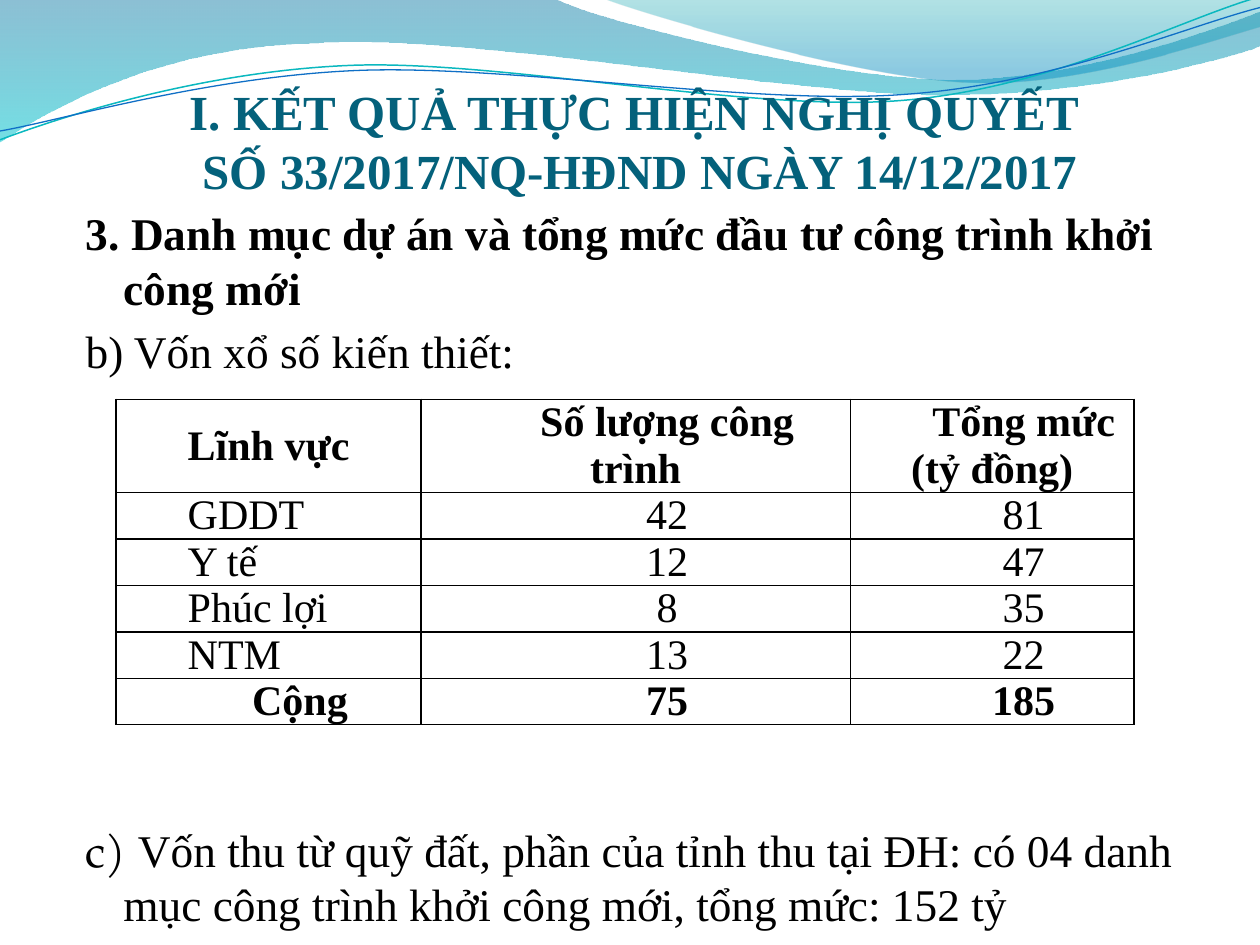
from dataclasses import dataclass

from lxml.etree import SubElement
from pptx import Presentation
from pptx.dml.color import RGBColor
from pptx.enum.text import MSO_ANCHOR, MSO_AUTO_SIZE, PP_ALIGN
from pptx.oxml.ns import qn
from pptx.util import Inches, Pt


@dataclass(frozen=True)
class Theme:
    """Colours, fonts and type sizes of the slide."""

    title_color: str = "04617B"
    ink: str = "000000"
    paper: str = "FFFFFF"
    cyan_line: str = "0AB8BF"
    blue_line: str = "0F6FC6"
    wide_wave: tuple = ((0, "0074A1", 45), (1, "00C6CF", 55))
    corner_wave: tuple = ((0, "00A1A9", 30), (0.8, "008BBF", 45))
    font: str = "Times New Roman"
    marker_font: str = "TeX Gyre Pagella"
    title_size: float = 28
    body_size: float = 25.9
    table_size: float = 24
    title_leading: float = 33.7
    body_leading: float = 31.1


THEME = Theme()

WIDE_WAVE = [
    [(0, 0)], [(4.4, -0.01)],
    [(4.76, 0.17), (6.64, 0.63), (7.58, 0.63)],
    [(8.53, 0.63), (9.58, 0.26), (10, 0.09)], [(10.01, 0.36)],
    [(9.83, 0.44), (8.7, 0.76), (7.46, 0.75)],
    [(6.22, 0.75), (3.82, 0.28), (2.57, 0.34)],
    [(1.29, 0.36), (0.46, 0.83), (-0.01, 1.13)], [(0, 0)],
]
CORNER_WAVE = [
    [(4.79, -0.01)],
    [(5.09, 0.11), (6.82, 0.62), (7.69, 0.65)],
    [(8.56, 0.69), (9.61, 0.32), (10, 0.21)], [(10, 0)], [(4.79, -0.01)],
]
CYAN_CURVE = [
    [(0, 1.11)],
    [(0.48, 0.93), (1.58, 0.57), (2.77, 0.52)],
    [(3.95, 0.47), (5.93, 0.89), (7.13, 0.8)],
    [(8.33, 0.71), (9.38, 0.15), (9.98, -0.02)],
]
BLUE_CURVE = [
    [(0, 1.04)],
    [(0.47, 0.96), (1.64, 0.61), (2.83, 0.56)],
    [(4.03, 0.51), (5.97, 0.84), (7.17, 0.75)],
    [(8.36, 0.67), (9.41, 0.21), (10, 0.06)],
]
ROWS = [
    ("Lĩnh vực", "Số lượng công trình", "Tổng mức (tỷ đồng)"),
    ("GDDT", "42", "81"),
    ("Y tế", "12", "47"),
    ("Phúc lợi", "8", "35"),
    ("NTM", "13", "22"),
    ("Cộng", "75", "185"),
]


def write(paragraph, text, size, color=THEME.ink, bold=False, font=THEME.font,
          align=PP_ALIGN.LEFT, left=0, indent=0, before=0, leading=None):
    """Add formatted text to a paragraph, with newlines as line breaks."""
    for number, line in enumerate(text.split("\n")):
        if number:
            paragraph.add_line_break()
        run = paragraph.add_run()
        run.text = line
        run.font.name, run.font.size, run.font.bold = font, Pt(size), bold
        run.font.color.rgb = RGBColor.from_string(color)
    paragraph.alignment = align
    paragraph.space_before = Pt(before)
    if leading:
        paragraph.line_spacing = Pt(leading)
    properties = paragraph._p.get_or_add_pPr()
    properties.set("marL", str(Inches(left)))
    properties.set("indent", str(Inches(indent)))
    if properties.find(qn("a:buNone")) is None:
        SubElement(properties, qn("a:buNone"))


def place(shape, box):
    """Move a shape to a box of left, top, width and height in inches."""
    shape.left, shape.top, shape.width, shape.height = map(Inches, box)


def add_outline(slide, segments, closed):
    """Draw straight and cubic segments as one freeform without shadow."""
    start, *points = [(Inches(x), Inches(y)) for segment in segments for x, y in segment]
    builder = slide.shapes.build_freeform(*start, scale=1.0)
    builder.add_line_segments(points, close=closed)
    shape = builder.convert_to_shape()
    shape.shadow.inherit = False
    outline = next(shape._element.iter(qn("a:path")))
    lines = iter(outline.findall(qn("a:lnTo")))
    for segment in segments[1:]:
        group = [next(lines) for _ in segment]
        if len(group) == 3:
            cubic = SubElement(outline, qn("a:cubicBezTo"))
            group[0].addprevious(cubic)
            for line in group:
                cubic.append(line[0])
                outline.remove(line)
    return shape


def add_wave(slide, segments, stops):
    """Draw a wave with a transparent gradient from top to bottom."""
    shape = add_outline(slide, segments, True)
    shape.line.fill.background()
    shape.fill.gradient()
    shape.fill.gradient_angle = 270
    for stop, (position, color, opacity) in zip(shape.fill.gradient_stops, stops):
        stop.position = position
        stop.color.rgb = RGBColor.from_string(color)
        color_element = stop._gs.find(qn("a:srgbClr"))
        SubElement(color_element, qn("a:alpha"), val=str(opacity * 1000))


def add_curve(slide, segments, color, width):
    """Draw an open curved line."""
    shape = add_outline(slide, segments, False)
    shape.fill.background()
    shape.line.color.rgb = RGBColor.from_string(color)
    shape.line.width = Pt(width)


def add_waves(slide):
    """Draw the decoration along the top edge."""
    add_wave(slide, WIDE_WAVE, THEME.wide_wave)
    add_wave(slide, CORNER_WAVE, THEME.corner_wave)
    add_curve(slide, CYAN_CURVE, THEME.cyan_line, 0.85)
    add_curve(slide, BLUE_CURVE, THEME.blue_line, 0.75)


def fill_title(slide, box):
    """Place and write the title."""
    title = slide.shapes.title
    place(title, box)
    frame = title.text_frame
    frame.auto_size, frame.vertical_anchor = MSO_AUTO_SIZE.NONE, MSO_ANCHOR.BOTTOM
    frame.margin_left = frame.margin_right = frame.margin_bottom = 0
    write(frame.paragraphs[0],
          "I. KẾT QUẢ THỰC HIỆN NGHỊ QUYẾT \nSỐ 33/2017/NQ-HĐND NGÀY 14/12/2017",
          THEME.title_size, color=THEME.title_color, bold=True,
          align=PP_ALIGN.CENTER, leading=THEME.title_leading)
    slide.shapes._spTree.append(title._element)


def fill_body(slide, box):
    """Place and write the list, leaving room for the table."""
    body = slide.placeholders[1]
    place(body, box)
    frame = body.text_frame
    frame.auto_size, frame.vertical_anchor = MSO_AUTO_SIZE.NONE, MSO_ANCHOR.TOP
    layout = {"left": 0.3, "indent": -0.3, "leading": THEME.body_leading}
    write(frame.paragraphs[0],
          "3. Danh mục dự án và tổng mức đầu tư công trình khởi công mới",
          THEME.body_size, bold=True, before=5, **layout)
    write(frame.add_paragraph(), "b) Vốn xổ số kiến thiết:",
          THEME.body_size, before=5, **layout)
    land = frame.add_paragraph()
    for text, font in (("c) ", THEME.marker_font),
                       ("Vốn thu từ quỹ đất, phần của tỉnh thu tại ĐH: có 04 danh mục "
                        "công trình khởi công mới, tổng mức: 152 tỷ", THEME.font)):
        write(land, text, THEME.body_size, font=font, before=254, **layout)
    slide.shapes._spTree.append(body._element)


def format_cell(cell):
    """Give a cell its borders, fill, margins and anchor."""
    properties = cell._tc.get_or_add_tcPr()
    for side in ("lnL", "lnR", "lnT", "lnB"):
        line = SubElement(properties, qn(f"a:{side}"), w=str(Pt(1)))
        SubElement(SubElement(line, qn("a:solidFill")), qn("a:srgbClr"), val=THEME.ink)
    cell.fill.solid()
    cell.fill.fore_color.rgb = RGBColor.from_string(THEME.paper)
    cell.margin_left = cell.margin_right = Inches(0.07)
    cell.margin_top = cell.margin_bottom = 0
    cell.vertical_anchor = MSO_ANCHOR.MIDDLE


def add_projects_table(slide, box):
    """Add the table of projects by field."""
    table = slide.shapes.add_table(len(ROWS), 3, *map(Inches, box)).table
    table.first_row = table.horz_banding = False
    for column, width in zip(table.columns, (2.42, 3.41, 2.25)):
        column.width = Inches(width)
    last = len(ROWS) - 1
    for row_index, values in enumerate(ROWS):
        table.rows[row_index].height = Inches(0.32 if row_index else 0.64)
        for column_index, value in enumerate(values):
            cell = table.cell(row_index, column_index)
            format_cell(cell)
            centred = column_index > 0 or row_index == last
            write(cell.text_frame.paragraphs[0], value, THEME.table_size,
                  bold=row_index in (0, last), indent=0.5,
                  align=PP_ALIGN.CENTER if centred else PP_ALIGN.LEFT)


def main():
    """Build and save the presentation."""
    presentation = Presentation()
    presentation.slide_width, presentation.slide_height = Inches(10), Inches(7.5)
    slide = presentation.slides.add_slide(presentation.slide_layouts[1])
    add_waves(slide)
    fill_title(slide, (0.58, 0.33, 9, 1.25))
    fill_body(slide, (0.58, 1.58, 9, 5.92))
    add_projects_table(slide, (0.92, 3.17, 8.08, 2.8))
    presentation.save("out.pptx")


if __name__ == "__main__":
    main()
